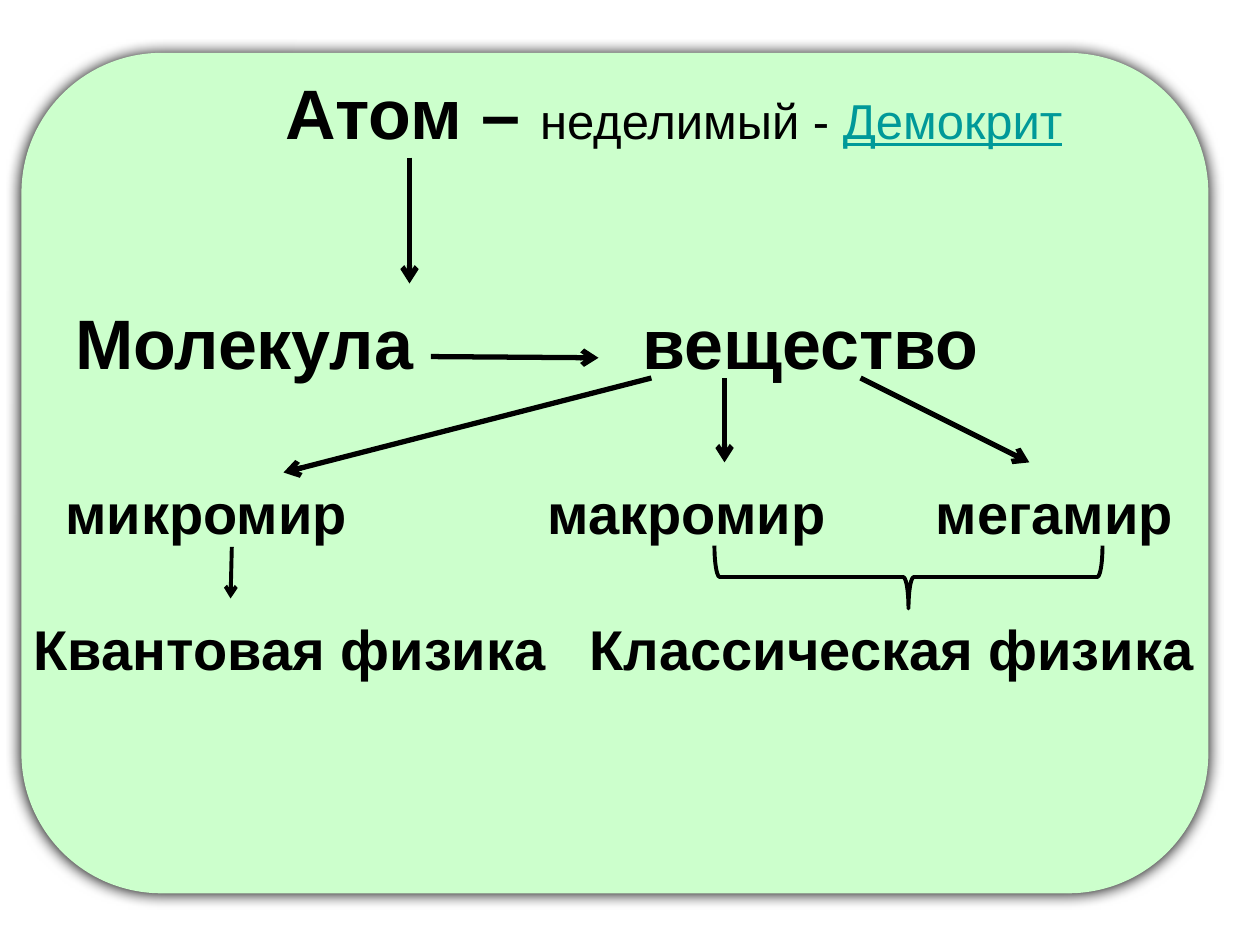
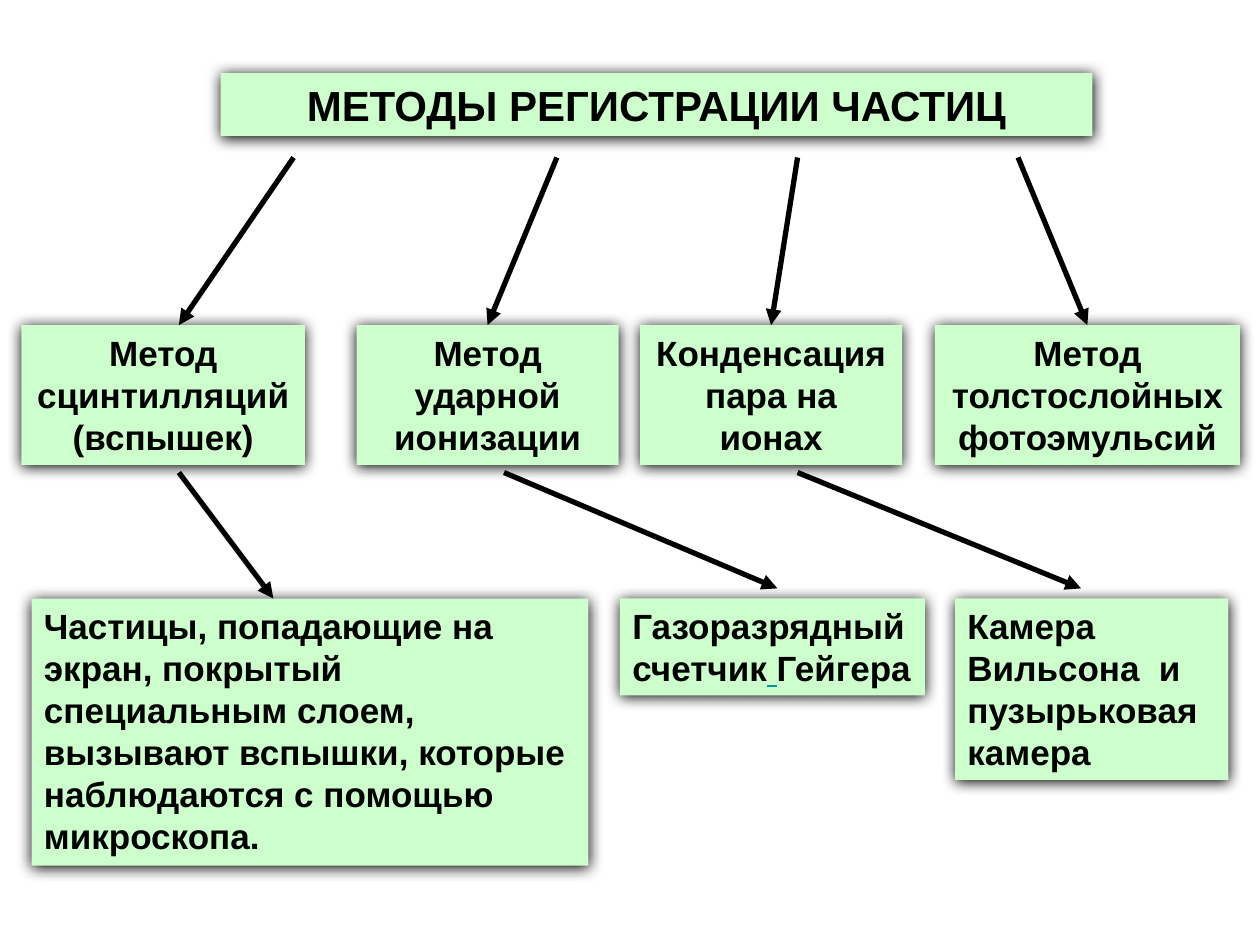
from dataclasses import dataclass

from lxml.etree import SubElement
from pptx import Presentation
from pptx.dml.color import RGBColor
from pptx.enum.shapes import MSO_CONNECTOR, MSO_SHAPE
from pptx.enum.text import MSO_ANCHOR, MSO_AUTO_SIZE, PP_ALIGN
from pptx.oxml.ns import qn
from pptx.util import Inches, Pt


@dataclass(frozen=True)
class Theme:
    font: str = "Arial"
    ink: str = "000000"
    accent: str = "009999"
    panel: str = "CCFFCC"
    term: int = 40
    world: int = 32
    remark: int = 28
    heading: int = 24
    body: int = 20
    thick: float = 3
    thin: float = 2.25
    shadow_blur: float = 8.5
    shadow_offset: float = 1


def write(paragraph, text, *, size, color, font, bold=True, underline=False):
    """Add one formatted run to a paragraph."""
    run = paragraph.add_run()
    run.text = text
    run.font.name = font
    run.font.size = Pt(size)
    run.font.bold = bold
    run.font.underline = underline
    run.font.color.rgb = RGBColor.from_string(color)


class Deck:
    def __init__(self, theme):
        self.theme = theme
        self.prs = Presentation()
        self.prs.slide_width, self.prs.slide_height = Inches(10), Inches(7.5)
        self.slide = None

    def new_slide(self):
        self.slide = self.prs.slides.add_slide(self.prs.slide_layouts[6])

    def fill_frame(self, frame, pieces, size, align=PP_ALIGN.LEFT):
        """Pieces are a string, or pairs of a string and its own format."""
        if isinstance(pieces, str):
            pieces = [(pieces, {})]
        frame.word_wrap = True
        frame.auto_size = MSO_AUTO_SIZE.SHAPE_TO_FIT_TEXT
        frame.vertical_anchor = MSO_ANCHOR.TOP
        paragraph = frame.paragraphs[0]
        paragraph.alignment = align
        base = {"size": size, "color": self.theme.ink, "font": self.theme.font}
        for text, own in pieces:
            write(paragraph, text, **(base | own))

    def label(self, pieces, left, top, width, height, size):
        box = self.slide.shapes.add_textbox(*map(Inches, (left, top, width, height)))
        self.fill_frame(box.text_frame, pieces, size)

    def panel(self, kind, left, top, width, height):
        """Green shape without outline, on a soft shadow."""
        theme = self.theme
        panel = self.slide.shapes.add_shape(kind, *map(Inches, (left, top, width, height)))
        panel.fill.solid()
        panel.fill.fore_color.rgb = RGBColor.from_string(theme.panel)
        panel.line.fill.background()
        panel.shadow.inherit = False
        effects = panel._element.spPr.find(qn("a:effectLst"))
        shadow = SubElement(effects, qn("a:outerShdw"), blurRad=str(Pt(theme.shadow_blur)),
                            dist=str(Pt(theme.shadow_offset)), dir="5400000",
                            algn="ctr", rotWithShape="0")
        SubElement(shadow, qn("a:srgbClr"), val=theme.ink)
        return panel

    def card(self, pieces, left, top, width, height, size, align=PP_ALIGN.LEFT):
        card = self.panel(MSO_SHAPE.RECTANGLE, left, top, width, height)
        self.fill_frame(card.text_frame, pieces, size, align)
        return card

    def outline(self, line, weight):
        line.color.rgb = RGBColor.from_string(self.theme.ink)
        line.width = Pt(weight)

    def arrow(self, start, end, head, weight=None, target=None):
        """Arrow from start to end; a target is joined at its top side."""
        arrow = self.slide.shapes.add_connector(
            MSO_CONNECTOR.STRAIGHT, *map(Inches, (*start, *end)))
        self.outline(arrow.line, weight or self.theme.thick)
        properties = arrow._element.spPr
        SubElement(properties.find(qn("a:ln")), qn("a:tailEnd"), type=head)
        SubElement(properties, qn("a:effectLst"))
        if target is not None:
            arrow.end_connect(target, 0)

    def brace(self, left, top, width, height):
        brace = self.slide.shapes.add_shape(
            MSO_SHAPE.RIGHT_BRACE, *map(Inches, (left, top, width, height)))
        brace.rotation = 90
        brace.fill.background()
        brace.shadow.inherit = False
        self.outline(brace.line, self.theme.thin)


def build_atom_slide(deck):
    theme = deck.theme
    deck.new_slide()
    deck.panel(MSO_SHAPE.ROUNDED_RECTANGLE, 0.17, 0.42, 9.42, 6.67)

    # From the atom to matter
    deck.label([("Атом – ", {}),
                ("неделимый - ", {"size": theme.remark, "bold": False}),
                ("Демокрит", {"size": theme.remark, "bold": False,
                              "color": theme.accent, "underline": True})],
               2.17, 0.5, 6.42, 0.77, theme.term)
    for term, left in (("Молекула", 0.5), ("вещество", 5)):
        deck.label(term, left, 2.33, 3, 0.77, theme.term)

    # Worlds and the physics that describes them
    for world, left, width in (("микромир", 0.42, 2.5), ("макромир", 4.25, 2.5),
                               ("мегамир", 7.33, 2.25)):
        deck.label(world, left, 3.75, width, 0.64, theme.world)
    for physics, left, width in (("Квантовая физика", 0.17, 4.42),
                                 ("Классическая физика", 4.58, 5.25)):
        deck.label(physics, left, 4.83, width, 0.64, theme.world)
    deck.brace(6.96, 3.04, 0.5, 3.08)

    # Arrows
    for start, end in (((3.25, 1.25), (3.25, 2.25)), ((3.42, 2.83), (4.75, 2.84)),
                       ((5.17, 3), (2.25, 3.75)), ((5.75, 3), (5.75, 3.67)),
                       ((6.83, 3), (8.17, 3.67))):
        deck.arrow(start, end, "arrow")
    deck.arrow((1.84, 4.34), (1.83, 4.75), "arrow", theme.thin)


def build_methods_slide(deck):
    theme = deck.theme
    title_exit, method_top, method_exit, device_top = 1.25, 2.58, 3.75, 4.75
    deck.new_slide()
    deck.card("МЕТОДЫ РЕГИСТРАЦИИ ЧАСТИЦ", 1.75, 0.58, 6.92, 0.5,
              theme.heading, PP_ALIGN.CENTER)

    # Methods: text, left, width, arrow start x, arrow end x (None: top middle)
    methods = (
        ("Метод сцинтилляций (вспышек)", 0.17, 2.25, 2.33, 1.42),
        ("Метод ударной ионизации", 2.83, 2.08, 4.42, None),
        ("Конденсация пара на ионах", 5.08, 2.08, 6.33, None),
        ("Метод толстослойных фотоэмульсий", 7.42, 2.42, 8.08, None),
    )
    for method, left, width, start_x, end_x in methods:
        card = deck.card(method, left, method_top, width, 1.11, theme.body, PP_ALIGN.CENTER)
        deck.arrow((start_x, title_exit), (end_x or left + width / 2, method_top),
                   "triangle", target=None if end_x else card)

    # What each method relies on: text, left, width, height, arrow start x and end
    devices = (
        ("Частицы, попадающие на экран, покрытый специальным слоем, вызывают вспышки, "
         "которые наблюдаются с помощью микроскопа.", 0.25, 4.42, 2.12, 1.42, (2.17, 4.75)),
        ([("Газоразрядный счетчик", {}), (" ", {"color": theme.accent, "underline": True}),
          ("Гейгера", {})], 4.92, 2.42, 0.77, 4, (6.17, 4.67)),
        ("Камера Вильсона  и пузырьковая камера", 7.58, 2.17, 1.44, 6.33, (8.58, 4.67)),
    )
    for device, left, width, height, start_x, end in devices:
        deck.card(device, left, device_top, width, height, theme.body)
        deck.arrow((start_x, method_exit), end, "triangle")


def main():
    deck = Deck(Theme())
    build_atom_slide(deck)
    build_methods_slide(deck)
    deck.prs.save("out.pptx")


if __name__ == "__main__":
    main()
